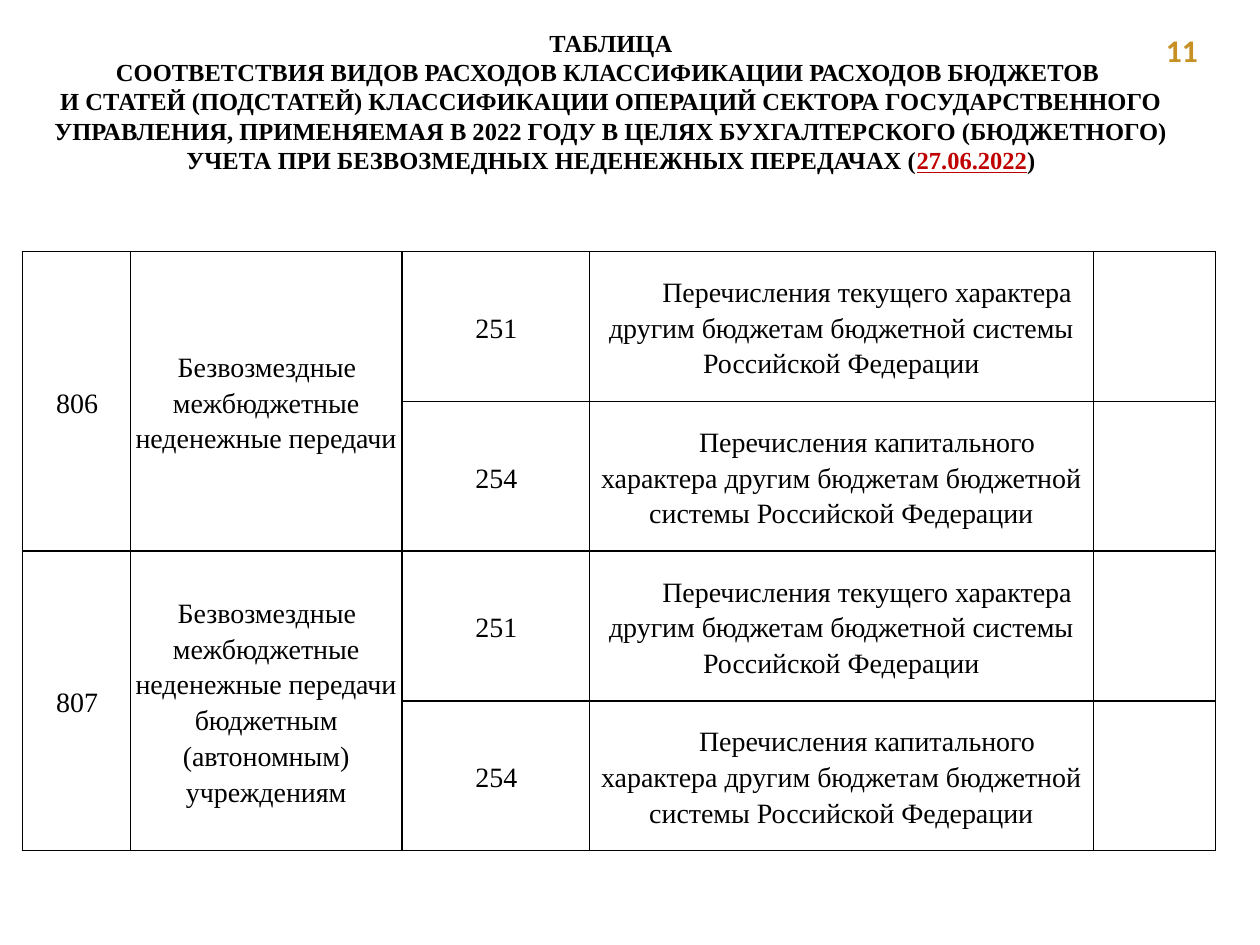
from dataclasses import dataclass

from lxml import etree
from pptx import Presentation
from pptx.dml.color import RGBColor
from pptx.enum.text import MSO_ANCHOR, MSO_AUTO_SIZE, PP_ALIGN
from pptx.oxml.ns import qn
from pptx.util import Cm, Pt

CENTER = PP_ALIGN.CENTER
TOP, MIDDLE = MSO_ANCHOR.TOP, MSO_ANCHOR.MIDDLE
NO_FIT = MSO_AUTO_SIZE.NONE
TITLE_ONLY = 5


@dataclass(frozen=True)
class Theme:
    ink: str = "000000"
    date: str = "C00000"
    gold: str = "C79023"
    serif: str = "Times New Roman"
    sans: str = "Calibri"
    head: int = 14
    page: int = 18
    cell: int = 16
    rule: int = 1


class Deck:
    def __init__(self, theme):
        self.theme = theme
        self.file = Presentation()
        self.file.slide_width, self.file.slide_height = Cm(25.4), Cm(19.05)
        self.slide = self.file.slides.add_slide(self.file.slide_layouts[TITLE_ONLY])

    def run(self, para, text, size, font, color, bold=False, line=False):
        run = para.add_run()
        run.text = text
        run.font.size, run.font.name = Pt(size), font
        run.font.bold, run.font.underline = bold, line
        run.font.color.rgb = RGBColor.from_string(color)

    def place(self, shape, box):
        shape.left, shape.top, shape.width, shape.height = map(Cm, box)

    def title(self, lines, box):
        """Fill the title; each line is a list of (text, is_date) runs."""
        look = self.theme
        shape = self.slide.shapes.title
        self.place(shape, box)
        frame = shape.text_frame
        frame.auto_size, frame.vertical_anchor, frame.word_wrap = NO_FIT, TOP, True
        for i, line in enumerate(lines):
            para = frame.add_paragraph() if i else frame.paragraphs[0]
            para.alignment = CENTER
            for text, dated in line:
                color = look.date if dated else look.ink
                self.run(para, text, look.head, look.serif, color, True, dated)

    def number(self, text, box):
        look = self.theme
        frame = self.slide.shapes.add_textbox(*map(Cm, box)).text_frame
        frame.word_wrap = True
        self.run(frame.paragraphs[0], text, look.page, look.sans, look.gold, True)

    def border(self, cell):
        props = cell._tc.get_or_add_tcPr()
        for i, side in enumerate(("lnL", "lnR", "lnT", "lnB")):
            line = etree.Element(qn(f"a:{side}"), w=str(Pt(self.theme.rule)))
            fill = etree.SubElement(line, qn("a:solidFill"))
            etree.SubElement(fill, qn("a:srgbClr"), val=self.theme.ink)
            props.insert(i, line)

    def label(self, cell, text, indent):
        look = self.theme
        para = cell.text_frame.paragraphs[0]
        para.alignment, para.line_spacing = CENTER, 1.15
        para._p.get_or_add_pPr().set("indent", str(Cm(indent)))
        self.run(para, text, look.cell, look.serif, look.ink)

    def table(self, groups, items, widths, height, left, top):
        """Each group spans one row per item in its first two columns."""
        step = len(items)
        count = step * len(groups)
        grid = self.slide.shapes.add_table(
            count, len(widths), Cm(left), Cm(top),
            Cm(sum(widths)), Cm(height * count)).table
        grid.first_row = grid.horz_banding = False
        for col, width in zip(grid.columns, widths):
            col.width = Cm(width)
        for row in grid.rows:
            row.height = Cm(height)
        for cell in grid.iter_cells():
            cell.fill.background()
            cell.vertical_anchor = MIDDLE
            cell.margin_left = cell.margin_right = Cm(0.1)
            cell.margin_top = cell.margin_bottom = 0
            self.border(cell)
        for i, group in enumerate(groups):
            first = i * step
            for col, text in enumerate(group):
                cell = grid.cell(first, col)
                cell.merge(grid.cell(first + step - 1, col))
                self.label(cell, text, 0.03)
            for row, (code, name) in enumerate(items, first):
                self.label(grid.cell(row, 2), code, 0.03)
                self.label(grid.cell(row, 3), name, 1.04)


def main():
    deck = Deck(Theme())

    # Heading
    deck.title([
        [("ТАБЛИЦА", False)],
        [("СООТВЕТСТВИЯ ВИДОВ РАСХОДОВ КЛАССИФИКАЦИИ РАСХОДОВ БЮДЖЕТОВ ", False)],
        [("И СТАТЕЙ (ПОДСТАТЕЙ) КЛАССИФИКАЦИИ ОПЕРАЦИЙ СЕКТОРА ГОСУДАРСТВЕННОГО "
          "УПРАВЛЕНИЯ, ПРИМЕНЯЕМАЯ В 2022 ГОДУ В ЦЕЛЯХ БУХГАЛТЕРСКОГО (БЮДЖЕТНОГО) "
          "УЧЕТА ПРИ БЕЗВОЗМЕДНЫХ НЕДЕНЕЖНЫХ ПЕРЕДАЧАХ (", False),
         ("27.06.2022", True), (")", False)],
    ], (0.45, 0.43, 23.73, 3.25))

    # Page number
    deck.number(" 11", (23.11, 0.51, 1.83, 1.02))

    # Expense types against operation codes
    base = "Безвозмездные межбюджетные неденежные передачи"
    tail = "характера другим бюджетам бюджетной системы Российской Федерации"
    deck.table(
        groups=[("806", base),
                ("807", f"{base} бюджетным (автономным) учреждениям")],
        items=[("251", f"Перечисления текущего {tail}"),
               ("254", f"Перечисления капитального {tail}")],
        widths=(2.18, 5.47, 3.78, 10.16, 2.46), height=3.02, left=0.45, top=5.07)

    deck.file.save("out.pptx")


if __name__ == "__main__":
    main()
